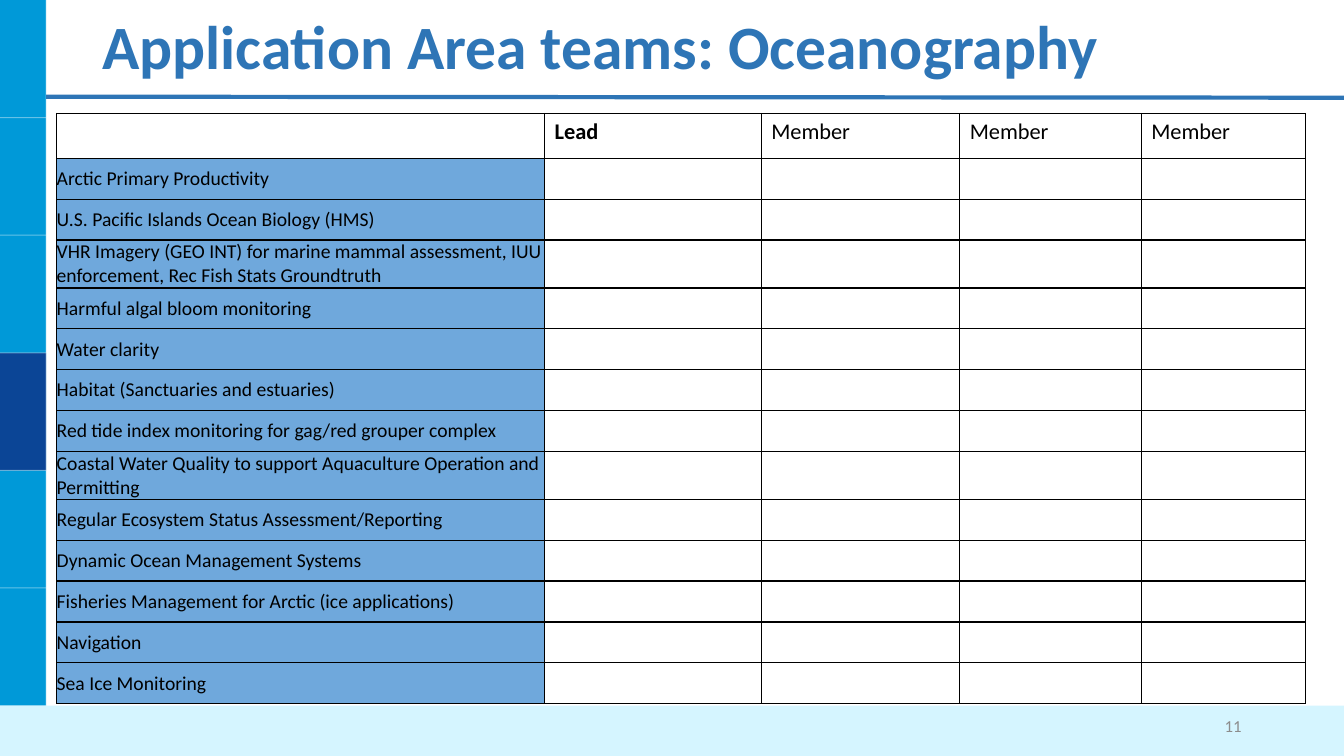
"""Builds the Oceanography application area team slide."""
from lxml import etree
from pptx import Presentation
from pptx.dml.color import RGBColor
from pptx.enum.shapes import MSO_CONNECTOR, MSO_SHAPE
from pptx.enum.text import MSO_ANCHOR, PP_ALIGN
from pptx.oxml.ns import qn
from pptx.util import Pt

STRAIGHT = MSO_CONNECTOR.STRAIGHT
RECTANGLE = MSO_SHAPE.RECTANGLE
MIDDLE = MSO_ANCHOR.MIDDLE
LEFT, RIGHT = PP_ALIGN.LEFT, PP_ALIGN.RIGHT

WHITE = RGBColor(0xFF, 0xFF, 0xFF)
BLACK = RGBColor(0x00, 0x00, 0x00)
GREY = RGBColor(0x8C, 0x8C, 0x8C)
SKY = RGBColor(0x00, 0x99, 0xD8)
NAVY = RGBColor(0x0B, 0x45, 0x96)
PALE = RGBColor(0xD5, 0xF5, 0xFF)
BLUE = RGBColor(0x2E, 0x75, 0xB6)
TOPIC_BLUE = RGBColor(0x6F, 0xA8, 0xDC)

FONT = "Calibri"
WIDTH, HEIGHT = 960, 540
BAND_WIDTH, BAND_STEP = 33, 84
FOOTER_TOP = 504

HEADINGS = ["", "Lead", "Member", "Member", "Member"]
COLUMN_WIDTHS = [348.5, 154.8, 141.8, 129.6, 117.4]
HEADER_HEIGHT, ROW_HEIGHT, TALL_HEIGHT = 32.1, 29.2, 34.2
TOPICS = [
    "Arctic Primary Productivity",
    "U.S. Pacific Islands Ocean Biology (HMS)",
    "VHR Imagery (GEO INT) for marine mammal assessment, IUU enforcement, "
    "Rec Fish Stats Groundtruth",
    "Harmful algal bloom monitoring",
    "Water clarity",
    "Habitat (Sanctuaries and estuaries)",
    "Red tide index monitoring for gag/red grouper complex",
    "Coastal Water Quality to support Aquaculture Operation and Permitting",
    "Regular Ecosystem Status Assessment/Reporting",
    "Dynamic Ocean Management Systems",
    "Fisheries Management for Arctic (ice applications)",
    "Navigation",
    "Sea Ice Monitoring",
]
TALL_TOPICS = (2, 7)


def add_block(slide, left, top, width, height, color):
    """Add a plain filled rectangle."""
    shape = slide.shapes.add_shape(RECTANGLE, Pt(left), Pt(top), Pt(width), Pt(height))
    shape.shadow.inherit = False
    shape.fill.solid()
    shape.fill.fore_color.rgb = color
    shape.line.fill.background()


def add_line(slide, start, end, color, width, opacity=100):
    """Add a straight line with an optional opacity in percent."""
    line = slide.shapes.add_connector(STRAIGHT, *map(Pt, start + end))
    line.line.color.rgb = color
    line.line.width = Pt(width)
    properties = line._element.spPr
    if opacity < 100:
        color_element = properties.find(".//" + qn("a:srgbClr"))
        etree.SubElement(color_element, qn("a:alpha"), val=str(opacity * 1000))
    etree.SubElement(properties, qn("a:effectLst"))


def format_text(text_frame, size, color, bold=False, alignment=LEFT):
    """Format the single paragraph of a text frame."""
    paragraph = text_frame.paragraphs[0]
    paragraph.alignment = alignment
    for run in paragraph.runs:
        run.font.name = FONT
        run.font.size = Pt(size)
        run.font.bold = bold
        run.font.color.rgb = color


def add_label(slide, box, text, size, color, bold=False, alignment=LEFT):
    """Add a vertically centred text box."""
    text_frame = slide.shapes.add_textbox(*map(Pt, box)).text_frame
    text_frame.word_wrap = True
    text_frame.vertical_anchor = MIDDLE
    text_frame.text = text
    format_text(text_frame, size, color, bold, alignment)
    return text_frame


def add_side_band(slide, left, top, width, height):
    """Add the left band with its dark step and divider lines."""
    add_block(slide, left, top, width, height, SKY)
    add_block(slide, left, top + 3 * BAND_STEP, width, BAND_STEP, NAVY)
    for step in range(1, 7):
        y = top + step * BAND_STEP
        add_line(slide, (left, y), (left + width, y), WHITE, 0.75, 40)
    right = left + width
    add_line(slide, (right, top), (right, top + height), WHITE, 0.75, 40)


def add_title(slide, left, top, width, height):
    """Add the rule and the slide title above it."""
    add_line(slide, (BAND_WIDTH, 69.1), (WIDTH, 69.8), BLUE, 3)
    title = add_label(slide, (left, top, width, height),
                      "Application Area teams: Oceanography", 44, BLUE, True)
    title.paragraphs[0].line_spacing = 0.9


def add_borders(cell):
    """Draw black one-point borders ahead of the cell fill."""
    properties = cell._tc.get_or_add_tcPr()
    for position, side in enumerate(("a:lnL", "a:lnR", "a:lnT", "a:lnB")):
        border = etree.Element(qn(side), w=str(Pt(1)))
        fill = etree.SubElement(border, qn("a:solidFill"))
        etree.SubElement(fill, qn("a:srgbClr"), val=str(BLACK))
        properties.insert(position, border)


def add_team_table(slide, left, top):
    """Add the table of topics and team members."""
    heights = [HEADER_HEIGHT] + [
        TALL_HEIGHT if index in TALL_TOPICS else ROW_HEIGHT
        for index in range(len(TOPICS))]
    table = slide.shapes.add_table(
        len(heights), len(COLUMN_WIDTHS), Pt(left), Pt(top),
        Pt(sum(COLUMN_WIDTHS)), Pt(sum(heights))).table
    table.first_row = table.horz_banding = False
    for column, width in zip(table.columns, COLUMN_WIDTHS):
        column.width = Pt(width)
    for row, height in zip(table.rows, heights):
        row.height = Pt(height)
    for cell in table.iter_cells():
        cell.fill.background()
        add_borders(cell)
    for column, heading in enumerate(HEADINGS):
        if heading:
            cell = table.cell(0, column)
            cell.text_frame.text = heading
            format_text(cell.text_frame, 16, BLACK, heading == "Lead")
    for row, topic in enumerate(TOPICS, 1):
        cell = table.cell(row, 0)
        cell.fill.solid()
        cell.fill.fore_color.rgb = TOPIC_BLUE
        cell.margin_left = cell.margin_right = cell.margin_top = cell.margin_bottom = 0
        cell.vertical_anchor = MIDDLE
        cell.text_frame.text = topic
        format_text(cell.text_frame, 14, BLACK)


def main():
    """Build and save the presentation."""
    presentation = Presentation()
    presentation.slide_width, presentation.slide_height = Pt(WIDTH), Pt(HEIGHT)
    slide = presentation.slides.add_slide(presentation.slide_layouts[6])
    add_side_band(slide, 0, 0, BAND_WIDTH, HEIGHT)
    add_block(slide, 0, FOOTER_TOP, WIDTH, HEIGHT - FOOTER_TOP, PALE)
    add_title(slide, 66, 2.9, 828, 65.5)
    add_team_table(slide, 40.5, 81)
    add_label(slide, (678, FOOTER_TOP, 216, 28.8), "11", 12, GREY, alignment=RIGHT)
    presentation.save("out.pptx")


if __name__ == "__main__":
    main()
